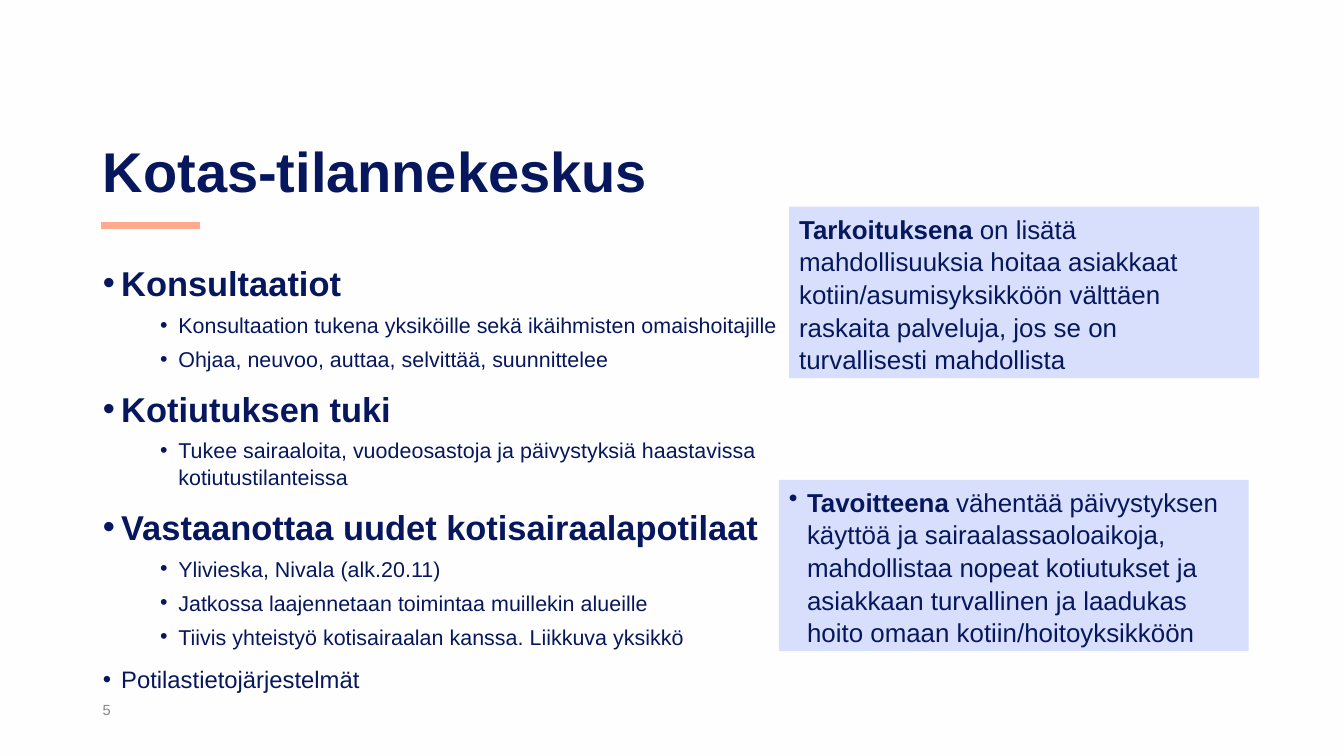
from lxml import etree
from pptx import Presentation
from pptx import util as u
from pptx.dml.color import RGBColor
from pptx.enum import shapes, text
from pptx.oxml import ns

NAVY, LAVENDER, CORAL, GREY = "06175E", "D8DFFD", "FFA98D", "888686"


def color(code):
    return RGBColor.from_string(code)


def write(frame, words, lead="", size=18.5, ink=NAVY, bold=False,
          level=0, indent=None, before=0, spacing=1.05):
    """Add a paragraph; lead is a bold opening, indent (cm) gives a bullet."""
    frame.word_wrap = True
    first = not frame.text
    paragraph = frame.paragraphs[0] if first else frame.add_paragraph()
    paragraph.level = level
    if indent is not None:
        props = paragraph._p.get_or_add_pPr()
        props.set("marL", str(u.Cm(indent)))
        props.set("indent", str(u.Cm(-0.46)))
        etree.SubElement(props, ns.qn("a:buChar")).set("char", "•")
    paragraph.alignment = text.PP_ALIGN.LEFT
    paragraph.line_spacing = spacing
    paragraph.space_before = u.Pt(0 if first else before)
    for part, strong in ((lead, True), (words, bold)):
        if part:
            run = paragraph.add_run()
            run.text = part
            run.font.name = "Arial"
            run.font.size = u.Pt(size)
            run.font.bold = strong
            run.font.color.rgb = color(ink)


deck = Presentation()
deck.slide_width, deck.slide_height = u.Cm(33.87), u.Cm(19.05)
slide = deck.slides.add_slide(deck.slide_layouts[1])
slide.background.fill.solid()
slide.background.fill.fore_color.rgb = color("FFFEFE")

# Title with its accent line
title = slide.shapes.title
title.left, title.top, title.width, title.height = u.Cm(2.34), u.Cm(1.27), u.Cm(25.4), u.Cm(4.01)
title.text_frame.vertical_anchor = text.MSO_ANCHOR.BOTTOM
title.text_frame.auto_size = text.MSO_AUTO_SIZE.NONE
write(title.text_frame, "Kotas-tilannekeskus", size=40, bold=True, spacing=0.9)

accent = slide.shapes.add_connector(
    shapes.MSO_CONNECTOR.STRAIGHT, u.Cm(2.55), u.Cm(5.67), u.Cm(5.04), u.Cm(5.67))
accent.line.color.rgb = color(CORAL)
accent.line.width = u.Pt(5)
etree.SubElement(accent._element.spPr, ns.qn("a:effectLst"))

# Tasks of the centre
tasks = slide.placeholders[1]
tasks.left, tasks.top, tasks.width, tasks.height = u.Cm(2.34), u.Cm(6.43), u.Cm(18.57), u.Cm(11.35)
tasks.text_frame.auto_size = text.MSO_AUTO_SIZE.NONE
task_groups = [
    ("Konsultaatiot", [
        "Konsultaation tukena yksiköille sekä ikäihmisten omaishoitajille",
        "Ohjaa, neuvoo, auttaa, selvittää, suunnittelee"]),
    ("Kotiutuksen tuki", [
        "Tukee sairaaloita, vuodeosastoja ja päivystyksiä haastavissa kotiutustilanteissa"]),
    ("Vastaanottaa uudet kotisairaalapotilaat", [
        "Ylivieska, Nivala (alk.20.11)",
        "Jatkossa laajennetaan toimintaa muillekin alueille",
        "Tiivis yhteistyö kotisairaalan kanssa. Liikkuva yksikkö"]),
]
for heading, details in task_groups:
    write(tasks.text_frame, heading, size=24.6, bold=True, indent=0.46, before=10)
    for detail in details:
        write(tasks.text_frame, detail, size=15.3, level=1, indent=1.9, before=5)
write(tasks.text_frame, "Potilastietojärjestelmät", size=17, indent=0.46, before=10)

# Page number
page_number = slide.shapes.add_textbox(u.Cm(2.34), u.Cm(17.5), u.Cm(7.62), u.Cm(0.74))
page_number.text_frame.vertical_anchor = text.MSO_ANCHOR.MIDDLE
write(page_number.text_frame, "5", size=10.5, ink=GREY, spacing=1)

# Purpose and goal panels
panels = [
    (19.89, 5.21, None, "Tarkoituksena",
     " on lisätä mahdollisuuksia hoitaa asiakkaat kotiin/asumisyksikköön välttäen "
     "raskaita palveluja, jos se on turvallisesti mahdollista"),
    (19.63, 12.09, 0.46, "Tavoitteena",
     " vähentää päivystyksen käyttöä ja sairaalassaoloaikoja, mahdollistaa nopeat "
     "kotiutukset ja asiakkaan turvallinen ja laadukas hoito omaan kotiin/hoitoyksikköön"),
]
for left, top, indent, lead, words in panels:
    panel = slide.shapes.add_shape(
        shapes.MSO_SHAPE.RECTANGLE, u.Cm(left), u.Cm(top), u.Cm(11.84), u.Cm(4.32))
    panel.shadow.inherit = False
    panel.fill.solid()
    panel.fill.fore_color.rgb = color(LAVENDER)
    panel.line.fill.background()
    panel.text_frame.vertical_anchor = text.MSO_ANCHOR.TOP
    write(panel.text_frame, words, lead=lead, indent=indent)

deck.save("out.pptx")
